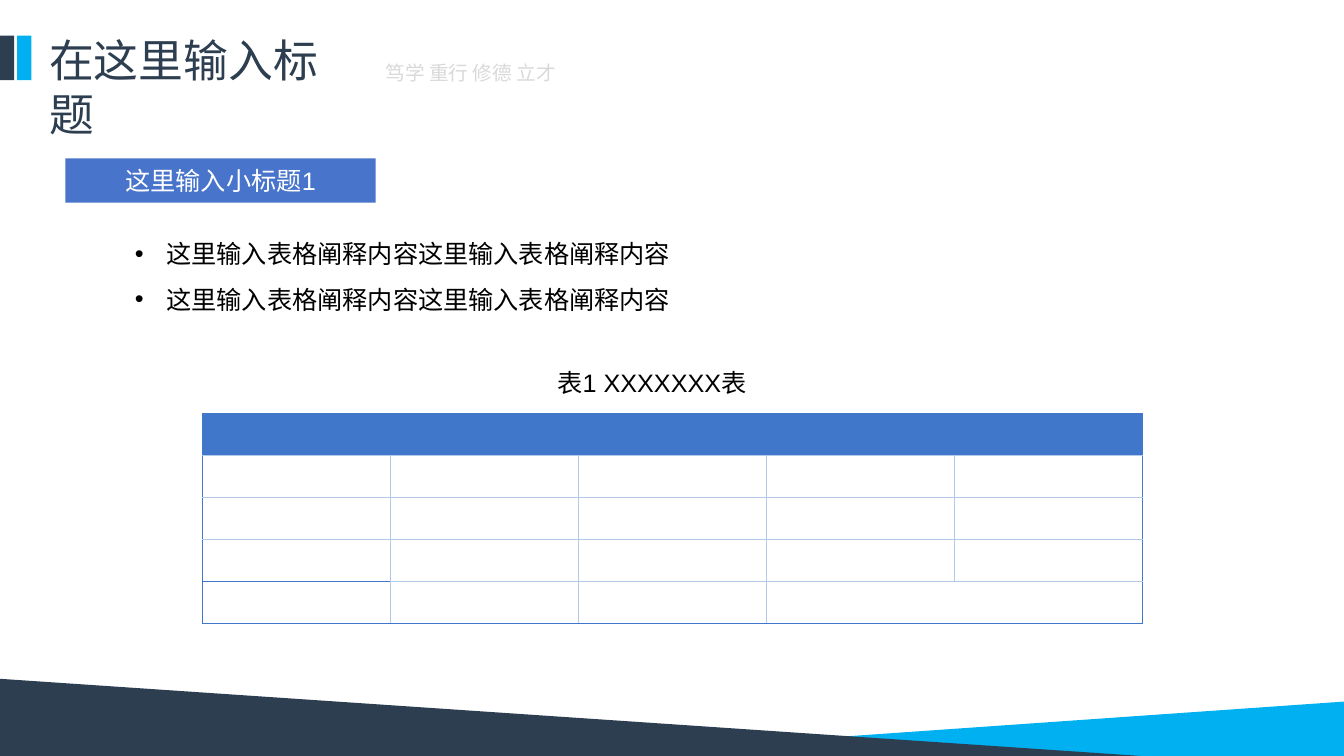
from pptx import Presentation
from pptx.dml.color import RGBColor
from pptx.enum.shapes import MSO_SHAPE
from pptx.enum.text import MSO_ANCHOR, PP_ALIGN
from pptx.oxml.ns import qn
from pptx.util import Cm, Pt
from lxml import etree

RECTANGLE = MSO_SHAPE.RECTANGLE
MIDDLE = MSO_ANCHOR.MIDDLE
LEFT, CENTER, JUSTIFY = PP_ALIGN.LEFT, PP_ALIGN.CENTER, PP_ALIGN.JUSTIFY

NAVY = RGBColor(0x2D, 0x3E, 0x50)
SKY = RGBColor(0x00, 0xB0, 0xF0)
HEADING_BLUE = RGBColor(0x48, 0x74, 0xCB)
TABLE_BLUE = RGBColor(0x40, 0x77, 0xCB)
GRID_BLUE = RGBColor(0xB3, 0xC9, 0xEA)
PALE_GREY = RGBColor(0xD9, 0xD9, 0xD9)
BLACK = RGBColor(0, 0, 0)
WHITE = RGBColor(0xFF, 0xFF, 0xFF)

BODY_FONT = "Arial"
TITLE_FONT = "Noto Sans CJK SC"
ROWS, COLUMNS = 5, 5
INDENT = Cm(0.79)


def paint(shape, color):
    shape.shadow.inherit = False
    shape.fill.solid()
    shape.fill.fore_color.rgb = color
    shape.line.fill.background()


def add_rectangle(slide, left, top, width, height, color):
    shape = slide.shapes.add_shape(RECTANGLE, Cm(left), Cm(top), Cm(width), Cm(height))
    paint(shape, color)
    return shape


def add_triangle(slide, points, color):
    start, *others = [(Cm(x), Cm(y)) for x, y in points]
    builder = slide.shapes.build_freeform(*start)
    builder.add_line_segments(others, close=True)
    paint(builder.convert_to_shape(), color)


def add_bullet(paragraph):
    properties = paragraph._p.get_or_add_pPr()
    properties.set("marL", str(INDENT))
    properties.set("indent", str(-INDENT))
    etree.SubElement(properties, qn("a:buFont")).set("typeface", BODY_FONT)
    etree.SubElement(properties, qn("a:buChar")).set("char", "•")


def write(text_frame, lines, size, color, font=BODY_FONT, align=LEFT, spacing=None, bullets=False):
    text_frame.word_wrap = True
    for index, line in enumerate(lines):
        paragraph = text_frame.add_paragraph() if index else text_frame.paragraphs[0]
        paragraph.text = line
        paragraph.alignment = align
        if spacing:
            paragraph.line_spacing = spacing
        if bullets:
            add_bullet(paragraph)
        paragraph.font.name = font
        paragraph.font.size = Pt(size)
        paragraph.font.color.rgb = color


def add_text(slide, left, top, width, height, lines, size, color, **style):
    box = slide.shapes.add_textbox(Cm(left), Cm(top), Cm(width), Cm(height))
    write(box.text_frame, lines, size, color, **style)


def set_border(cell, side, color):
    line = etree.SubElement(cell._tc.get_or_add_tcPr(), qn(f"a:ln{side}"), w=str(Pt(0.75)))
    fill = etree.SubElement(line, qn("a:solidFill"))
    etree.SubElement(fill, qn("a:srgbClr")).set("val", str(color))


def style_cell(cell, row, column):
    """Fill the cell and draw dark outer borders around a light inner grid."""
    header = row == 0
    outer_column = column in (0, COLUMNS - 1)
    dark = {
        "L": header or column == 0,
        "R": header or column + cell.span_width == COLUMNS,
        "T": header or (row == ROWS - 1 and outer_column),
        "B": header or row == ROWS - 1 or (row == ROWS - 2 and outer_column),
    }
    for side, is_dark in dark.items():
        set_border(cell, side, TABLE_BLUE if is_dark else GRID_BLUE)
    cell.fill.solid()
    cell.fill.fore_color.rgb = TABLE_BLUE if header else WHITE


def add_grid(slide, left, top, width, height):
    frame = slide.shapes.add_table(ROWS, COLUMNS, Cm(left), Cm(top), Cm(width), Cm(height))
    table = frame.table
    table.cell(0, 0).merge(table.cell(0, COLUMNS - 1))
    table.cell(ROWS - 1, COLUMNS - 2).merge(table.cell(ROWS - 1, COLUMNS - 1))
    for row in range(ROWS):
        for column in range(COLUMNS):
            style_cell(table.cell(row, column), row, column)


def main():
    presentation = Presentation()
    presentation.slide_width = Cm(33.87)
    presentation.slide_height = Cm(19.05)
    slide = presentation.slides.add_slide(presentation.slide_layouts[6])

    add_rectangle(slide, 0.43, 0.9, 0.36, 1.12, SKY)
    add_triangle(slide, [(14.25, 19.05), (33.87, 17.68), (33.87, 19.05)], SKY)
    add_triangle(slide, [(-0.08, 17.1), (28.75, 19.05), (-0.08, 19.05)], NAVY)
    add_rectangle(slide, 0, 0.9, 0.36, 1.12, NAVY)

    add_grid(slide, 5.1, 10.43, 23.7, 5.29)

    heading = add_rectangle(slide, 1.65, 3.99, 7.82, 1.12, HEADING_BLUE)
    heading.text_frame.vertical_anchor = MIDDLE
    write(heading.text_frame, ["这里输入小标题1"], 18, WHITE, align=CENTER)

    explanation = "这里输入表格阐释内容这里输入表格阐释内容"
    add_text(slide, 3.15, 5.51, 15.54, 3.71, [explanation] * 2, 18, BLACK,
             spacing=1.5, bullets=True)
    add_text(slide, 8.66, 8.76, 15.54, 1.4, ["表1 XXXXXXX表"], 18, BLACK,
             align=CENTER, spacing=1.5)
    add_text(slide, 0.99, 0.71, 8.3, 1.63, ["在这里输入标题"], 32, NAVY, font=TITLE_FONT)
    add_text(slide, 9.47, 1.4, 6.71, 0.86, ["笃学 重行 修德 立才"], 14, PALE_GREY,
             font=TITLE_FONT, align=JUSTIFY)

    presentation.save("out.pptx")


if __name__ == "__main__":
    main()
